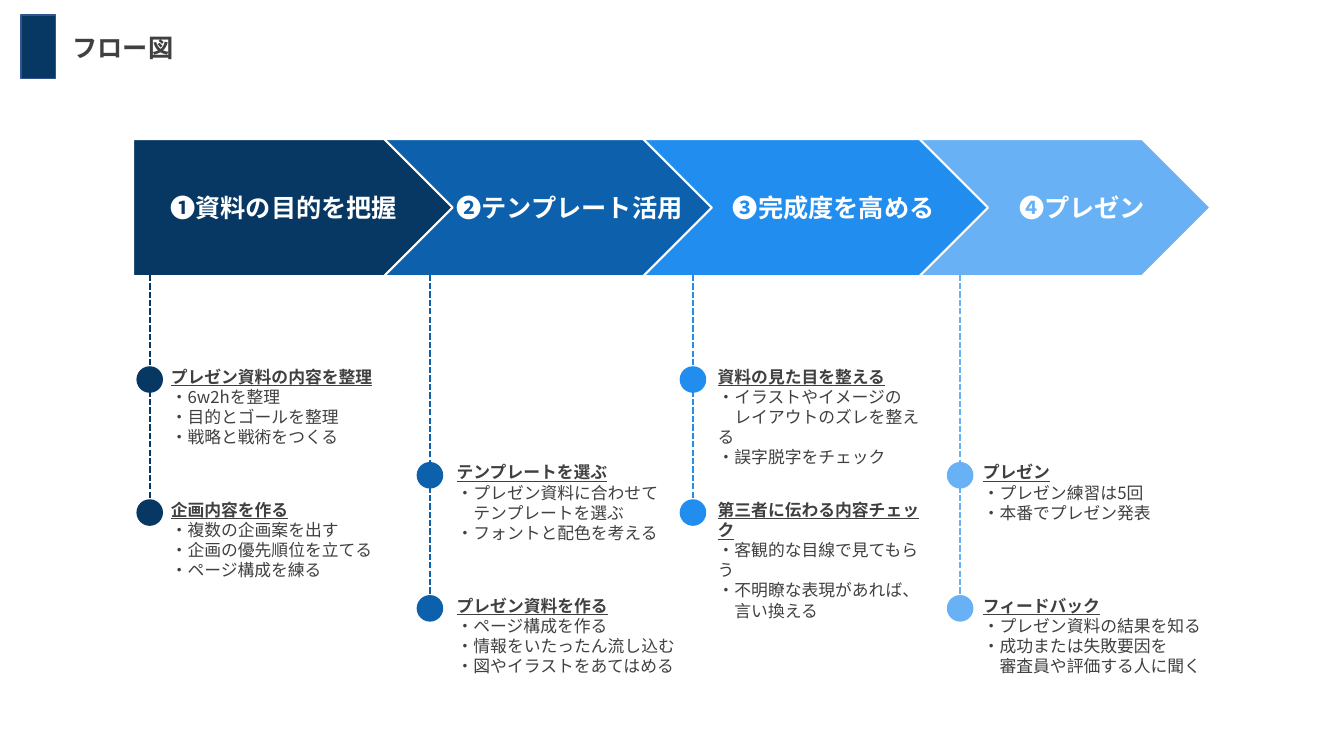
from copy import deepcopy
from dataclasses import dataclass

from lxml.etree import SubElement
from pptx import Presentation
from pptx.dml.color import RGBColor
from pptx.enum.dml import MSO_LINE
from pptx.enum.shapes import MSO_CONNECTOR, MSO_SHAPE
from pptx.enum.text import MSO_ANCHOR as ANCHOR, MSO_AUTO_SIZE as FIT, PP_ALIGN as ALIGN
from pptx.oxml.ns import qn
from pptx.util import Inches, Pt

FONT = "Noto Sans CJK JP"
NAVY, BLUE, AZURE, SKY = "073763", "0C60AC", "218DEF", "68B1F4"
WHITE, INK = "FFFFFF", "404040"
ARROW_TOP, ARROW_H = 18.4, 18.13
LABEL_TOP, LABEL_H = 24.8, 5.33
HIGH, LOW, STEP = 50.2, 62.87, 17.6
LIST_RISE, LIST_H = 3.07, 11.2
DOT = Inches(0.25)
TITLE_LAYOUT, CONTENT_LAYOUT = 5, 1

prs = Presentation()
prs.slide_width, prs.slide_height = Inches(40 / 3), Inches(7.5)


@dataclass
class Stage:
    label: str
    color: str
    arrow: tuple[float, float]
    label_span: tuple[float, float]
    list_span: tuple[float, float]
    dot_x: float
    dot_y: float
    line_top: float
    lists: list[list[str]]


STAGES = [
    Stage("➊資料の目的を把握", NAVY, (9.9, 23.78), (10.2, 21.83), (11.96, 17.48),
          11.14, HIGH, 34.13, [
              ["プレゼン資料の内容を整理", "・6w2hを整理", "・目的とゴールを整理", "・戦略と戦術をつくる"],
              ["企画内容を作る", "・複数の企画案を出す", "・企画の優先順位を立てる", "・ページ構成を練る"]]),
    Stage("❷テンプレート活用", BLUE, (22.58, 30.38), (32.93, 18.9), (33.23, 18.3),
          31.99, LOW, 35.2, [
              ["テンプレートを選ぶ", "・プレゼン資料に合わせて", "　テンプレートを選ぶ", "・フォントと配色を考える"],
              ["プレゼン資料を作る", "・ページ構成を作る", "・情報をいたったん流し込む", "・図やイラストをあてはめる"]]),
    Stage("❸完成度を高める", AZURE, (43.13, 30.38), (52.58, 18.9), (52.65, 17.18),
          51.56, HIGH, 34.13, [
              ["資料の見た目を整える", "・イラストやイメージの", "　レイアウトのズレを整える", "・誤字脱字をチェック"],
              ["第三者に伝わる内容チェック", "・客観的な目線で見てもらう", "・不明瞭な表現があれば、", "　言い換える"]]),
    Stage("❹プレゼン", SKY, (62.4, 27.68), (72.38, 16.28), (72.38, 20.55),
          71.44, LOW, 35.2, [
              ["プレゼン", "・プレゼン練習は5回", "・本番でプレゼン発表"],
              ["フィードバック", "・プレゼン資料の結果を知る", "・成功または失敗要因を", "　審査員や評価する人に聞く"]]),
]


def across(share: float) -> int:
    return round(prs.slide_width * share / 100)


def down(share: float) -> int:
    return round(prs.slide_height * share / 100)


def rgb(color: str) -> RGBColor:
    return RGBColor.from_string(color)


def place(sp, left: float, top: float, width: float, height: float) -> None:
    sp.left, sp.top = across(left), down(top)
    sp.width, sp.height = across(width), down(height)


def write(p, text: str, *, size: float, color: str, bold: bool = False,
          underline: bool = False, align=ALIGN.LEFT, spacing: float = 1.0) -> None:
    p.alignment, p.line_spacing = align, spacing
    p.space_before = p.space_after = Pt(0)
    r = p.add_run()
    r.text = text
    f = r.font
    f.name, f.size, f.bold, f.underline = FONT, Pt(size), bold, underline
    f.color.rgb = rgb(color)
    SubElement(r._r.get_or_add_rPr(), qn("a:ea")).set("typeface", FONT)


def add_solid(s, kind, box: tuple, fill: str, line: str, weight: float) -> None:
    sp = s.shapes.add_shape(kind, *box)
    sp.shadow.inherit = False
    sp.fill.solid()
    sp.fill.fore_color.rgb = rgb(fill)
    sp.line.color.rgb = rgb(line)
    sp.line.width = Pt(weight)


def add_arrow(s, stage: Stage) -> None:
    left, width = stage.arrow
    box = across(left), down(ARROW_TOP), across(width), down(ARROW_H)
    add_solid(s, MSO_SHAPE.PENTAGON, box, stage.color, WHITE, 1.5)


def add_label(s, stage: Stage) -> None:
    sp = s.shapes.add_textbox(0, 0, 0, 0)
    left, width = stage.label_span
    place(sp, left, LABEL_TOP, width, LABEL_H)
    tf = sp.text_frame
    tf.word_wrap, tf.auto_size = True, FIT.SHAPE_TO_FIT_TEXT
    write(tf.paragraphs[0], stage.label, size=18, color=WHITE, bold=True, align=ALIGN.CENTER)


def add_branch(s, stage: Stage) -> None:
    x, top = across(stage.dot_x), stage.line_top
    for i in range(len(stage.lists)):
        y = stage.dot_y + i * STEP
        line = s.shapes.add_connector(MSO_CONNECTOR.STRAIGHT, x, down(top), x, down(y))
        line.line.color.rgb = rgb(stage.color)
        line.line.width = Pt(1.5)
        line.line.dash_style = MSO_LINE.SQUARE_DOT
        SubElement(line._element.spPr, qn("a:effectLst"))
        box = x - DOT // 2, down(y) - DOT // 2, DOT, DOT
        add_solid(s, MSO_SHAPE.OVAL, box, stage.color, stage.color, 1)
        top = y + 1.47


def fill_list(sp, stage: Stage, row: int) -> None:
    left, width = stage.list_span
    place(sp, left, stage.dot_y + row * STEP - LIST_RISE, width, LIST_H)
    tf = sp.text_frame
    tf.word_wrap, tf.auto_size, tf.vertical_anchor = True, FIT.NONE, ANCHOR.TOP
    tf.margin_left = tf.margin_right = tf.margin_top = tf.margin_bottom = Inches(0.1)
    for i, text in enumerate(stage.lists[row]):
        p = tf.add_paragraph() if i else tf.paragraphs[0]
        write(p, text, size=12, color=INK, bold=i == 0, underline=i == 0)
        pPr = p._p.get_or_add_pPr()
        pPr.set("marL", "0")
        pPr.set("indent", "0")
        SubElement(pPr, qn("a:buNone"))


def fill_title(sp, text: str) -> None:
    place(sp, 4.65, 3.33, 9.9, 5.73)
    tf = sp.text_frame
    tf.word_wrap, tf.auto_size, tf.vertical_anchor = True, FIT.NONE, ANCHOR.BOTTOM
    write(tf.paragraphs[0], text, size=18, color=INK, bold=True, spacing=0.9)


def add_list_slide(count: int):
    layout = prs.slide_layouts[TITLE_LAYOUT]
    body = prs.slide_layouts[CONTENT_LAYOUT].placeholders[1]
    for idx in range(20, 20 + count):
        sp = deepcopy(body._element)
        sp.nvSpPr.cNvPr.set("id", str(idx))
        sp.nvSpPr.nvPr.find(qn("p:ph")).set("idx", str(idx))
        layout.shapes._spTree.append(sp)
    return prs.slides.add_slide(layout)


def main() -> None:
    entries = [(stage, row) for stage in STAGES for row in range(len(stage.lists))]
    s = add_list_slide(len(entries))
    title, *bodies = s.placeholders
    fill_title(title, "フロー図")
    for sp, (stage, row) in zip(bodies, entries):
        fill_list(sp, stage, row)
    for stage in reversed(STAGES):
        add_arrow(s, stage)
    for stage in STAGES:
        add_label(s, stage)
        add_branch(s, stage)
    badge = across(1.58), down(2), across(2.55), down(8.4)
    add_solid(s, MSO_SHAPE.RECTANGLE, badge, NAVY, "325491", 1)
    prs.save("out.pptx")


if __name__ == "__main__":
    main()
